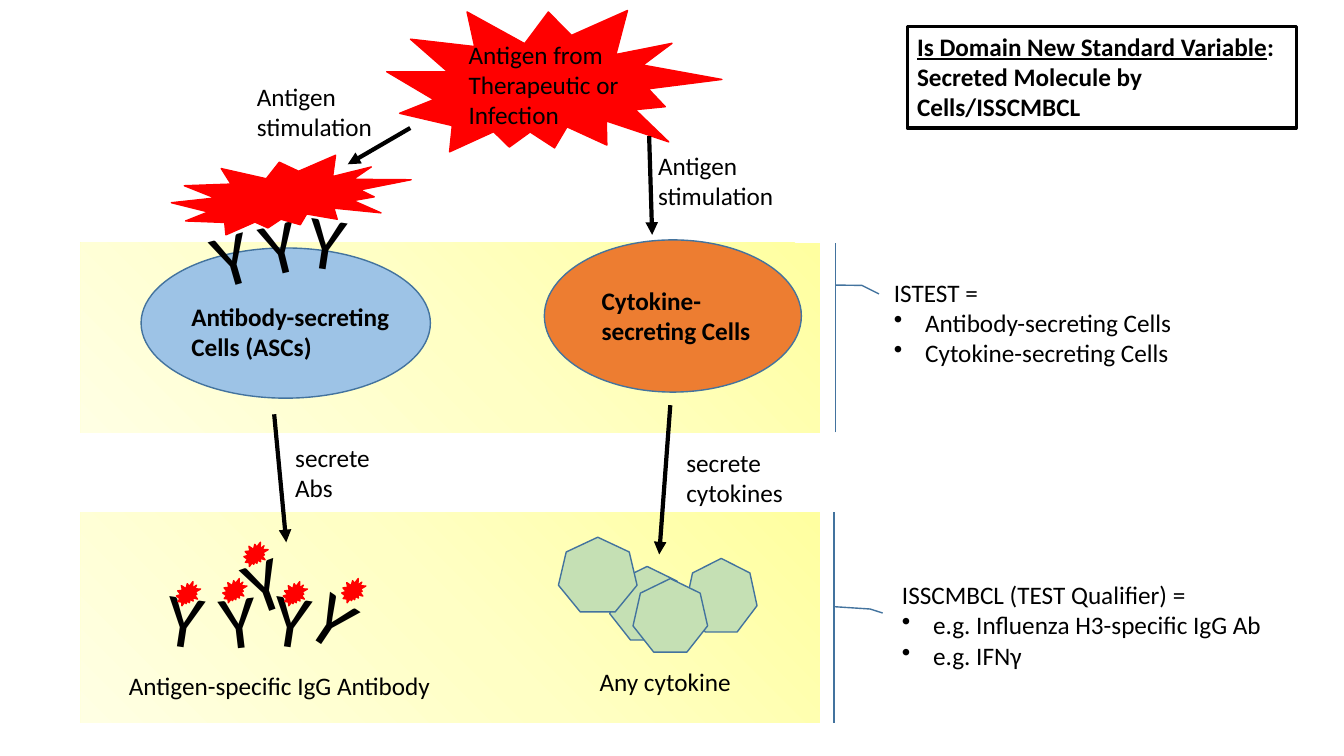
from copy import deepcopy
from dataclasses import dataclass

from lxml.etree import SubElement
from pptx import Presentation
from pptx.dml.color import RGBColor
from pptx.enum.shapes import MSO_CONNECTOR, MSO_SHAPE
from pptx.enum.text import MSO_AUTO_SIZE, PP_ALIGN
from pptx.oxml.ns import qn
from pptx.shapes.autoshape import Shape
from pptx.slide import Slide
from pptx.util import Inches, Pt

WIDTH, HEIGHT = Inches(13.33), Inches(7.5)
COLUMNS, ROWS = 40, 22.5
RECEPTOR_ROWS = 3.03
SPECK_CELLS = 0.72


@dataclass(frozen=True)
class Theme:
    font: str = "Calibri"
    body: float = 18
    receptor: float = 54
    outline: float = 1
    arrow: float = 3
    frame: float = 2.25
    ink: str = "000000"
    edge: str = "43739E"
    antigen: str = "FF0000"
    antibody_cell: str = "9DC3E6"
    cytokine_cell: str = "ED7D31"
    cytokine: str = "C5E0B4"
    panel: tuple[str, ...] = ("FFFFA0", "FFFFC5", "FFFFE3")


THEME = Theme()


@dataclass(frozen=True)
class Box:
    column: float
    row: float
    columns: float
    rows: float
    turn: float = 0


@dataclass(frozen=True)
class Panel:
    box: Box
    callout: tuple[float, ...]


@dataclass(frozen=True)
class Figure:
    preset: MSO_SHAPE
    box: Box
    fill: str
    edge: str = THEME.edge


@dataclass(frozen=True)
class Arrow:
    start: tuple[float, float]
    end: tuple[float, float]


@dataclass(frozen=True)
class Label:
    box: Box
    lines: tuple[str, ...]
    bold: bool = False
    underlined: str = ""
    bulleted: bool = False
    framed: bool = False
    wrap: bool = True
    size: float = THEME.body
    align: PP_ALIGN = PP_ALIGN.LEFT


def receptor(column: float, row: float, columns: float, turn: float) -> Label:
    return Label(Box(column, row, columns, RECEPTOR_ROWS, turn), ("Y",),
                 size=THEME.receptor, align=PP_ALIGN.CENTER)


def antigen(box: Box) -> Figure:
    return Figure(MSO_SHAPE.EXPLOSION2, box, THEME.antigen, THEME.antigen)


def cytokine(column: float, row: float, columns: float, rows: float) -> Figure:
    return Figure(MSO_SHAPE.HEPTAGON, Box(column, row, columns, rows), THEME.cytokine)


PANELS = (
    Panel(Box(2.4, 7.23, 22, 5.64, 180), (0.778, -0.021, 0.776, -0.057, 0.731, -0.08)),
    Panel(Box(2.4, 15.24, 22, 6.27, 180), (0.551, -0.019, 0.54, -0.068, 0.521, -0.085)),
)
CELLS = (
    Figure(MSO_SHAPE.OVAL, Box(4.2, 7.38, 8.61, 4.47), THEME.antibody_cell),
    Figure(MSO_SHAPE.OVAL, Box(16.2, 7.14, 7.65, 4.53), THEME.cytokine_cell),
)
RECEPTORS = (
    receptor(8.7, 5.64, 2.1, 8.6),
    receptor(5.73, 6.09, 2.31, 343.9),
    receptor(7.26, 5.76, 2.1, 346.1),
    receptor(8.94, 16.89, 2.1, 33.8),
    receptor(7.65, 16.89, 2.1, 8.6),
    receptor(6.78, 15.81, 2.1, 340.1),
    receptor(6.03, 16.89, 2.1, 353.1),
    receptor(4.35, 16.89, 2.31, 8.6),
)
SPECKS = ((5.25, 17.31), (6.63, 17.22), (10.17, 17.22), (8.43, 17.31), (7.26, 16.14))
ANTIGENS = (
    antigen(Box(11.52, -0.03, 9.87, 5.04, 9.7)),
    antigen(Box(5.1, 4.62, 7.14, 2.37)),
    *(antigen(Box(column, row, SPECK_CELLS, SPECK_CELLS)) for column, row in SPECKS),
)
CYTOKINES = (
    cytokine(20.4, 16.62, 2.13, 2.19),
    cytokine(18.15, 16.86, 2.22, 2.19),
    cytokine(18.84, 17.22, 2.22, 2.19),
    cytokine(16.62, 15.99, 2.34, 2.22),
)
ARROWS = (
    Arrow((19.95, 12.06), (19.62, 16.5)),
    Arrow((8.16, 12.33), (8.52, 16.14)),
    Arrow((19.32, 4.05), (19.41, 6.99)),
    Arrow((12.21, 3.81), (10.35, 4.89)),
)
LABELS = (
    Label(Box(5.4, 8.82, 6.54, 2.13), ("Antibody-secreting Cells (ASCs)",), bold=True),
    Label(Box(17.61, 8.34, 5.04, 2.13), ("Cytokine-secreting Cells",), bold=True),
    Label(Box(13.65, 1.02, 5.67, 3.03), ("Antigen from", "Therapeutic or", "Infection")),
    Label(Box(7.35, 2.28, 4.23, 2.13), ("Antigen stimulation",)),
    Label(Box(19.29, 4.32, 4.23, 2.13), ("Antigen stimulation",)),
    Label(Box(20.13, 13.17, 4.41, 2.13), ("secrete cytokines",)),
    Label(Box(8.49, 13.02, 4.29, 2.13), ("secrete", "Abs")),
    Label(Box(27, 0.78, 11.58, 3.03), (":", "Secreted Molecule by Cells/ISSCMBCL"),
          bold=True, underlined="Is Domain New Standard Variable", framed=True),
    Label(Box(3.54, 19.8, 9.66, 1.2), ("Antigen-specific IgG Antibody",)),
    Label(Box(17.55, 19.68, 5.07, 1.2), ("Any cytokine",)),
    Label(Box(26.55, 17.1, 12.06, 3.93),
          ("ISSCMBCL (TEST Qualifier) =", "e.g. Influenza H3-specific IgG Ab", "e.g. IFNγ"),
          bulleted=True),
    Label(Box(26.31, 8.1, 9, 3.03),
          ("ISTEST =", "Antibody-secreting Cells", "Cytokine-secreting Cells"),
          bulleted=True, wrap=False),
)


def across(columns: float) -> int:
    return round(WIDTH * columns / COLUMNS)


def down(rows: float) -> int:
    return round(HEIGHT * rows / ROWS)


def frame(box: Box) -> tuple[int, int, int, int]:
    return across(box.column), down(box.row), across(box.columns), down(box.rows)


def color(value: str) -> RGBColor:
    return RGBColor.from_string(value)


def add_preset(slide: Slide, preset: MSO_SHAPE, box: Box, edge: str) -> Shape:
    shape = slide.shapes.add_shape(preset, *frame(box))
    shape.rotation = box.turn
    shape.shadow.inherit = False
    shape.line.color.rgb = color(edge)
    shape.line.width = Pt(THEME.outline)
    return shape


def draw_panel(slide: Slide, panel: Panel) -> None:
    shape = add_preset(slide, MSO_SHAPE.LINE_CALLOUT_2_ACCENT_BAR, panel.box, THEME.edge)
    for index, value in enumerate(panel.callout):
        shape.adjustments[index] = value
    shape.fill.gradient()
    shape.fill.gradient_angle = 45
    stops = shape.element.spPr.find(qn("a:gradFill")).find(qn("a:gsLst"))
    stops.append(deepcopy(stops[0]))
    for index, (stop, tint) in enumerate(zip(shape.fill.gradient_stops, THEME.panel)):
        stop.position = index / 2
        stop.color.rgb = color(tint)


def draw_figure(slide: Slide, figure: Figure) -> None:
    shape = add_preset(slide, figure.preset, figure.box, figure.edge)
    shape.fill.solid()
    shape.fill.fore_color.rgb = color(figure.fill)


def draw_arrow(slide: Slide, arrow: Arrow) -> None:
    connector = slide.shapes.add_connector(
        MSO_CONNECTOR.STRAIGHT, across(arrow.start[0]), down(arrow.start[1]),
        across(arrow.end[0]), down(arrow.end[1]))
    connector.line.color.rgb = color(THEME.ink)
    connector.line.width = Pt(THEME.arrow)
    properties = connector.element.spPr
    SubElement(properties.find(qn("a:ln")), qn("a:tailEnd"), type="triangle")
    SubElement(properties, qn("a:effectLst"))


def draw_label(slide: Slide, label: Label) -> None:
    shape = slide.shapes.add_textbox(*frame(label.box))
    shape.rotation = label.box.turn
    if label.framed:
        shape.line.color.rgb = color(THEME.ink)
        shape.line.width = Pt(THEME.frame)
    text = shape.text_frame
    text.word_wrap = label.wrap
    text.auto_size = MSO_AUTO_SIZE.SHAPE_TO_FIT_TEXT
    for index, line in enumerate(label.lines):
        paragraph = text.add_paragraph() if index else text.paragraphs[0]
        paragraph.alignment = label.align
        paragraph.font.name = THEME.font
        paragraph.font.size = Pt(label.size)
        paragraph.font.bold = label.bold
        paragraph.font.color.rgb = color(THEME.ink)
        if label.underlined and index == 0:
            heading = paragraph.add_run()
            heading.text = label.underlined
            heading.font.underline = True
        paragraph.add_run().text = line
        if label.bulleted and index:
            properties = paragraph._p.get_or_add_pPr()
            indent = Inches(0.31)
            properties.set("marL", str(indent))
            properties.set("indent", str(-indent))
            bullet = properties.makeelement(qn("a:buChar"), {"char": "•"})
            properties.find(qn("a:defRPr")).addprevious(bullet)


def main() -> None:
    deck = Presentation()
    deck.slide_width, deck.slide_height = WIDTH, HEIGHT
    slide = deck.slides.add_slide(deck.slide_layouts[6])
    for draw, parts in (
        (draw_panel, PANELS),
        (draw_figure, CELLS),
        (draw_label, RECEPTORS),
        (draw_figure, ANTIGENS + CYTOKINES),
        (draw_arrow, ARROWS),
        (draw_label, LABELS),
    ):
        for part in parts:
            draw(slide, part)
    deck.save("out.pptx")


if __name__ == "__main__":
    main()
